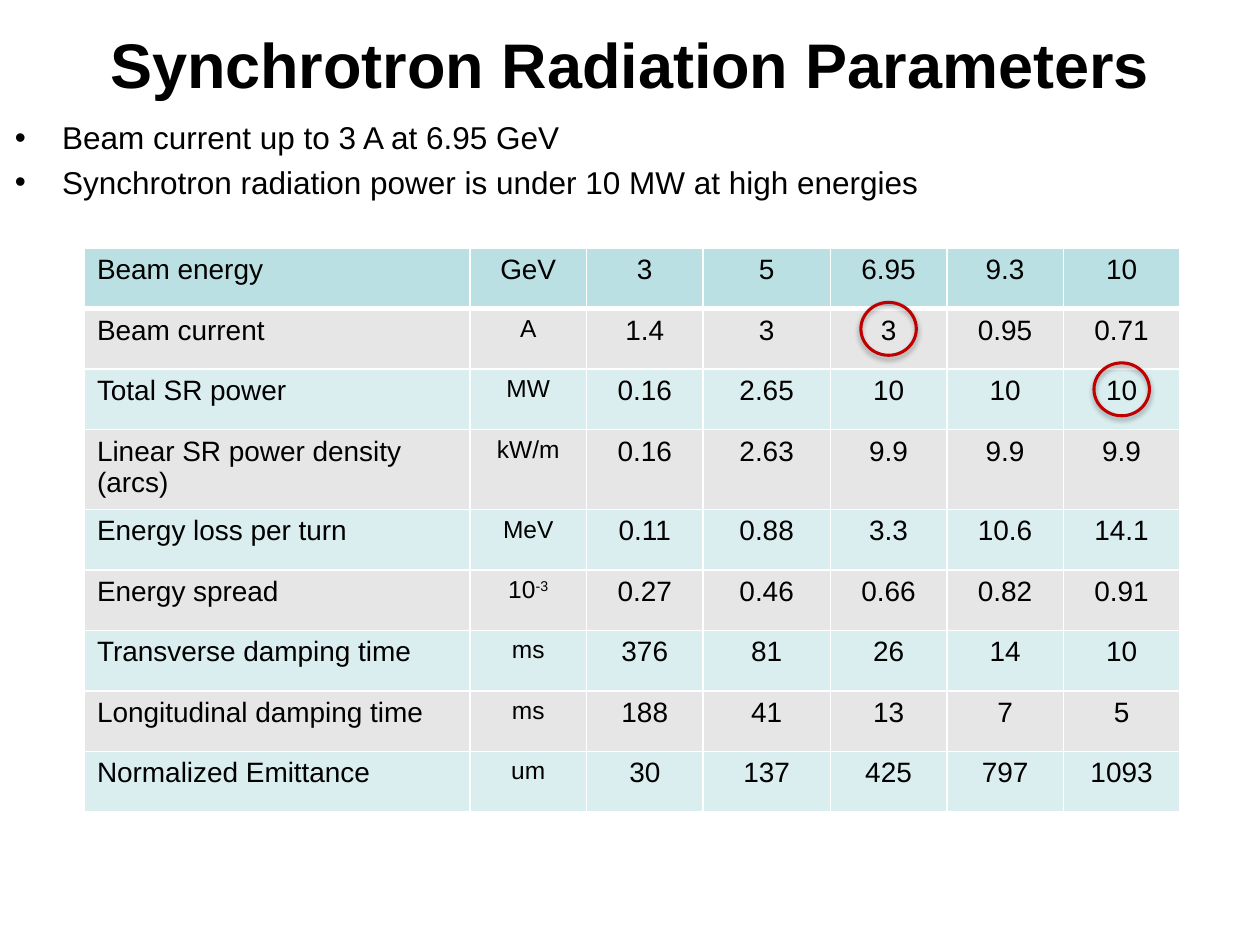
from lxml import etree
from pptx import Presentation
from pptx.dml.color import RGBColor
from pptx.enum.shapes import MSO_SHAPE
from pptx.enum.text import MSO_ANCHOR, PP_ALIGN
from pptx.oxml import parse_xml
from pptx.oxml.ns import nsdecls, qn
from pptx.util import Inches, Pt

ELLIPSE = MSO_SHAPE.OVAL
MIDDLE = MSO_ANCHOR.MIDDLE
LEFT, CENTER = PP_ALIGN.LEFT, PP_ALIGN.CENTER

THEME = {
    "font": "Arial",
    "text": "000000",
    "header": "BBE0E3",
    "bands": ("E6E6E6", "DAEDEF"),
    "border": "FFFFFF",
    "ring": "C00000",
    "title_size": 36,
    "bullet_size": 18,
    "cell_size": 16,
    "unit_size": 14,
}

BULLETS = [
    "Beam current up to 3 A at 6.95 GeV",
    "Synchrotron radiation power is under 10 MW at high energies",
]
ROWS = [
    ("Beam energy", "GeV", "3", "5", "6.95", "9.3", "10"),
    ("Beam current", "A", "1.4", "3", "3", "0.95", "0.71"),
    ("Total SR power", "MW", "0.16", "2.65", "10", "10", "10"),
    ("Linear SR power density (arcs)", "kW/m", "0.16", "2.63", "9.9", "9.9", "9.9"),
    ("Energy loss per turn", "MeV", "0.11", "0.88", "3.3", "10.6", "14.1"),
    ("Energy spread", "10^-3", "0.27", "0.46", "0.66", "0.82", "0.91"),
    ("Transverse damping time", "ms", "376", "81", "26", "14", "10"),
    ("Longitudinal damping time", "ms", "188", "41", "13", "7", "5"),
    ("Normalized Emittance", "um", "30", "137", "425", "797", "1093"),
]
RINGED_CELLS = [(1, 4), (2, 6)]


def style(p, size, bold=False):
    for r in p.runs:
        r.font.name = THEME["font"]
        r.font.size = Pt(size)
        r.font.bold = bold
        r.font.color.rgb = RGBColor.from_string(THEME["text"])


def add_border(cell, side, width):
    ln = etree.SubElement(cell._tc.get_or_add_tcPr(), qn(f"a:ln{side}"), w=str(Pt(width)))
    fill = etree.SubElement(ln, qn("a:solidFill"))
    etree.SubElement(fill, qn("a:srgbClr"), val=THEME["border"])


prs = Presentation()
prs.slide_width, prs.slide_height = Inches(10), Inches(7.5)
X, Y = prs.slide_width / 100, prs.slide_height / 100
s = prs.slides.add_slide(prs.slide_layouts[6])

sp = s.shapes.add_textbox(int(7.5 * X), 0, int(85 * X), int(13.33 * Y))
tf = sp.text_frame
tf.word_wrap = True
tf.vertical_anchor = MIDDLE
tf.text = "Synchrotron Radiation Parameters"
p = tf.paragraphs[0]
p.alignment = CENTER
style(p, THEME["title_size"], bold=True)

sp = s.shapes.add_textbox(int(0.2 * X), int(11.87 * Y), int(92.5 * X), int(14.27 * Y))
tf = sp.text_frame
tf.word_wrap = True
tf.text = "\n".join(BULLETS)
for i, p in enumerate(tf.paragraphs):
    pPr = p._p.get_or_add_pPr()
    pPr.set("marL", str(int(3.75 * X)))
    pPr.set("indent", str(int(-3.75 * X)))
    etree.SubElement(pPr, qn("a:buFont"), typeface=THEME["font"])
    etree.SubElement(pPr, qn("a:buChar"), char="•")
    if i:
        p.space_before = Pt(4)
    style(p, THEME["bullet_size"])

col_widths = [int(n * X) for n in (30.6, 9.25, 9.25, 10.1, 9.25, 9.25, 9.25)]
row_heights = [int((8.4 if i == 3 else 6.4) * Y) for i in range(len(ROWS))]
left, top = int(6.7 * X), int(26.27 * Y)
table = s.shapes.add_table(
    len(ROWS), len(col_widths), left, top, sum(col_widths), sum(row_heights)
).table
for column, width in zip(table.columns, col_widths):
    column.width = width
for row, height in zip(table.rows, row_heights):
    row.height = height

for i, values in enumerate(ROWS):
    color = THEME["bands"][(i - 1) % 2] if i else THEME["header"]
    for j, value in enumerate(values):
        cell = table.cell(i, j)
        for side, width in zip("LRTB", (1, 1, 3 if i == 1 else 1, 3 if i == 0 else 1)):
            add_border(cell, side, width)
        cell.fill.solid()
        cell.fill.fore_color.rgb = RGBColor.from_string(color)
        base, _, exponent = value.partition("^")
        p = cell.text_frame.paragraphs[0]
        p.text = base
        if exponent:
            r = p.add_run()
            r.text = exponent
            r._r.get_or_add_rPr().set("baseline", "30000")
        p.alignment = CENTER if j else LEFT
        style(p, THEME["unit_size"] if i and j == 1 else THEME["cell_size"])

ring_width, ring_height = int(4.4 * X), int(5.6 * Y)
for i, j in RINGED_CELLS:
    center_x = left + sum(col_widths[:j]) + col_widths[j] / 2
    center_y = top + sum(row_heights[:i]) + row_heights[i] / 2 - 1.07 * Y
    sp = s.shapes.add_shape(
        ELLIPSE, int(center_x - ring_width / 2), int(center_y - ring_height / 2),
        ring_width, ring_height,
    )
    sp.fill.background()
    sp.line.color.rgb = RGBColor.from_string(THEME["ring"])
    sp.line.width = Pt(1.75)
    sp.shadow.inherit = False
    sp._element.spPr.find(qn("a:effectLst")).append(parse_xml(
        f'<a:outerShdw {nsdecls("a")} blurRad="{Pt(3.1)}" dist="{Pt(1.8)}" dir="5400000" rotWithShape="0">'
        '<a:srgbClr val="000000"><a:alpha val="35000"/></a:srgbClr></a:outerShdw>'
    ))

prs.save("out.pptx")
